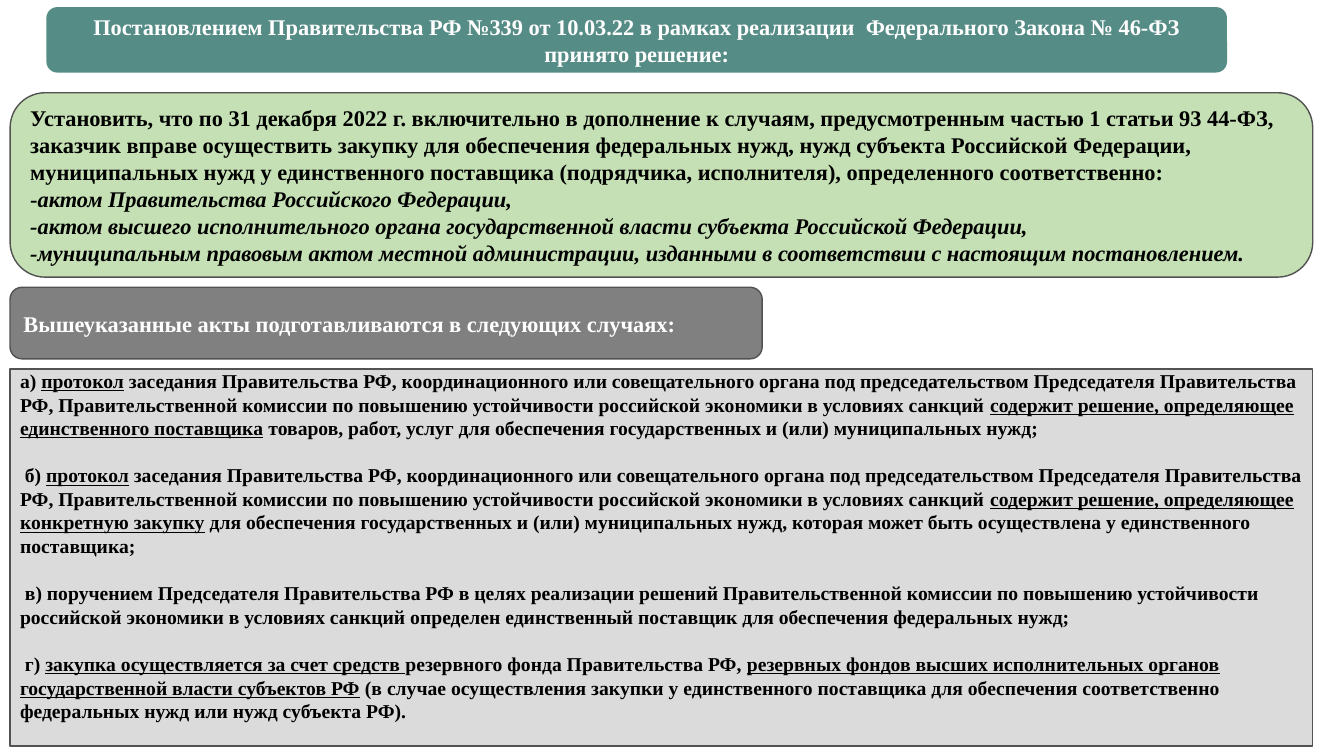
from pptx import Presentation
from pptx.dml.color import RGBColor
from pptx.enum.shapes import MSO_SHAPE as Shape
from pptx.enum.text import MSO_ANCHOR as Anchor, PP_ALIGN as Align
from pptx.util import Inches, Pt

COLORS = {
    "teal": "568C86",
    "gray": "808080",
    "green": "C5E0B4",
    "silver": "DBDBDB",
    "outline": "525252",
    "white": "FFFFFF",
    "black": "000000",
}
LEFT, FULL_WIDTH = 0.1, 12.92
PLAIN, UNDERLINED, ITALIC = "plain", "underlined", "italic"


def color(name):
    return RGBColor.from_string(COLORS[name])


class SlideBuilder:
    font = "Times New Roman"

    def __init__(self, slide):
        self.slide = slide

    def panel(self, kind, box, fill, outline=None, corner=None):
        panel = self.slide.shapes.add_shape(kind, *map(Inches, box))
        panel.shadow.inherit = False
        panel.fill.solid()
        panel.fill.fore_color.rgb = color(fill)
        if outline:
            panel.line.color.rgb = color(outline)
            panel.line.width = Pt(1)
        else:
            panel.line.fill.background()
        if corner:
            panel.adjustments[0] = corner
        return panel

    def text(self, panel, paragraphs, size, ink, align=Align.LEFT,
             anchor=Anchor.MIDDLE, gap=0):
        """Fill a panel with paragraphs, each a list of (words, style) runs."""
        frame = panel.text_frame
        frame.word_wrap = True
        frame.vertical_anchor = anchor
        if anchor == Anchor.TOP:
            frame.margin_top = 0
        for index, runs in enumerate(paragraphs):
            paragraph = frame.add_paragraph() if index else frame.paragraphs[0]
            paragraph.alignment = align
            paragraph.space_after = Pt(gap)
            for words, style in runs:
                run = paragraph.add_run()
                run.text = words
                font = run.font
                font.name, font.size, font.bold = self.font, Pt(size), True
                font.color.rgb = color(ink)
                if style == ITALIC:
                    font.italic = True
                if style == UNDERLINED:
                    font.underline = True


TITLE = [[("Постановлением Правительства РФ №339 от 10.03.22 в рамках реализации  "
           "Федерального Закона № 46-ФЗ принято решение:", PLAIN)]]
DECISION = [
    [("Установить, что по 31 декабря 2022 г. включительно в дополнение к случаям, "
      "предусмотренным частью 1 статьи 93 44-ФЗ, заказчик вправе осуществить закупку "
      "для обеспечения федеральных нужд, нужд субъекта Российской Федерации, "
      "муниципальных нужд у единственного поставщика (подрядчика, исполнителя), "
      "определенного соответственно:", PLAIN)],
    [("-", PLAIN), ("актом Правительства Российского Федерации,", ITALIC)],
    [("-актом высшего исполнительного органа государственной власти субъекта "
      "Российской Федерации,", ITALIC)],
    [("-муниципальным правовым актом местной администрации, изданными в соответствии "
      "с настоящим постановлением.", ITALIC)],
]
CASES_HEADING = [[("Вышеуказанные акты подготавливаются в следующих случаях:", PLAIN)]]
MEETING = (" заседания Правительства РФ, координационного или совещательного органа под "
           "председательством Председателя Правительства РФ, Правительственной комиссии "
           "по повышению устойчивости российской экономики в условиях санкций ")
CASES = [
    [("а) ", PLAIN), ("протокол", UNDERLINED), (MEETING, PLAIN),
     ("содержит решение, определяющее единственного поставщика", UNDERLINED),
     (" товаров, работ, услуг для обеспечения государственных и (или) "
      "муниципальных нужд;", PLAIN)],
    [(" б) ", PLAIN), ("протокол", UNDERLINED), (MEETING, PLAIN),
     ("содержит решение, определяющее конкретную закупку", UNDERLINED),
     (" для обеспечения государственных и (или) муниципальных нужд, которая может "
      "быть осуществлена у единственного поставщика;", PLAIN)],
    [(" в) поручением Председателя Правительства РФ в целях реализации решений "
      "Правительственной комиссии по повышению устойчивости российской экономики в "
      "условиях санкций определен единственный поставщик для обеспечения федеральных "
      "нужд;", PLAIN)],
    [(" г) ", PLAIN), ("закупка осуществляется за счет средств ", UNDERLINED),
     ("резервного фонда Правительства РФ, ", PLAIN),
     ("резервных фондов высших исполнительных органов государственной власти "
      "субъектов РФ", UNDERLINED),
     (" (в случае осуществления закупки у единственного поставщика для обеспечения "
      "соответственно федеральных нужд или нужд субъекта РФ).", PLAIN)],
]


def main():
    deck = Presentation()
    deck.slide_width, deck.slide_height = Inches(13.33), Inches(7.5)
    builder = SlideBuilder(deck.slides.add_slide(deck.slide_layouts[6]))

    title = builder.panel(Shape.ROUNDED_RECTANGLE, (0.46, 0.07, 11.71, 0.65), "teal")
    builder.text(title, TITLE, 16, "white", Align.CENTER)

    heading = builder.panel(Shape.ROUNDED_RECTANGLE, (LEFT, 2.85, 7.46, 0.71),
                            "gray", "outline")
    builder.text(heading, CASES_HEADING, 16, "white")

    decision = builder.panel(Shape.ROUNDED_RECTANGLE, (LEFT, 0.92, FULL_WIDTH, 1.83),
                             "green", "outline", corner=0.19)
    builder.text(decision, DECISION, 16, "black")

    cases = builder.panel(Shape.FLOWCHART_PROCESS, (LEFT, 3.66, FULL_WIDTH, 3.74),
                          "silver", "outline")
    builder.text(cases, CASES, 14, "black", anchor=Anchor.TOP, gap=17)

    deck.save("out.pptx")


if __name__ == "__main__":
    main()
